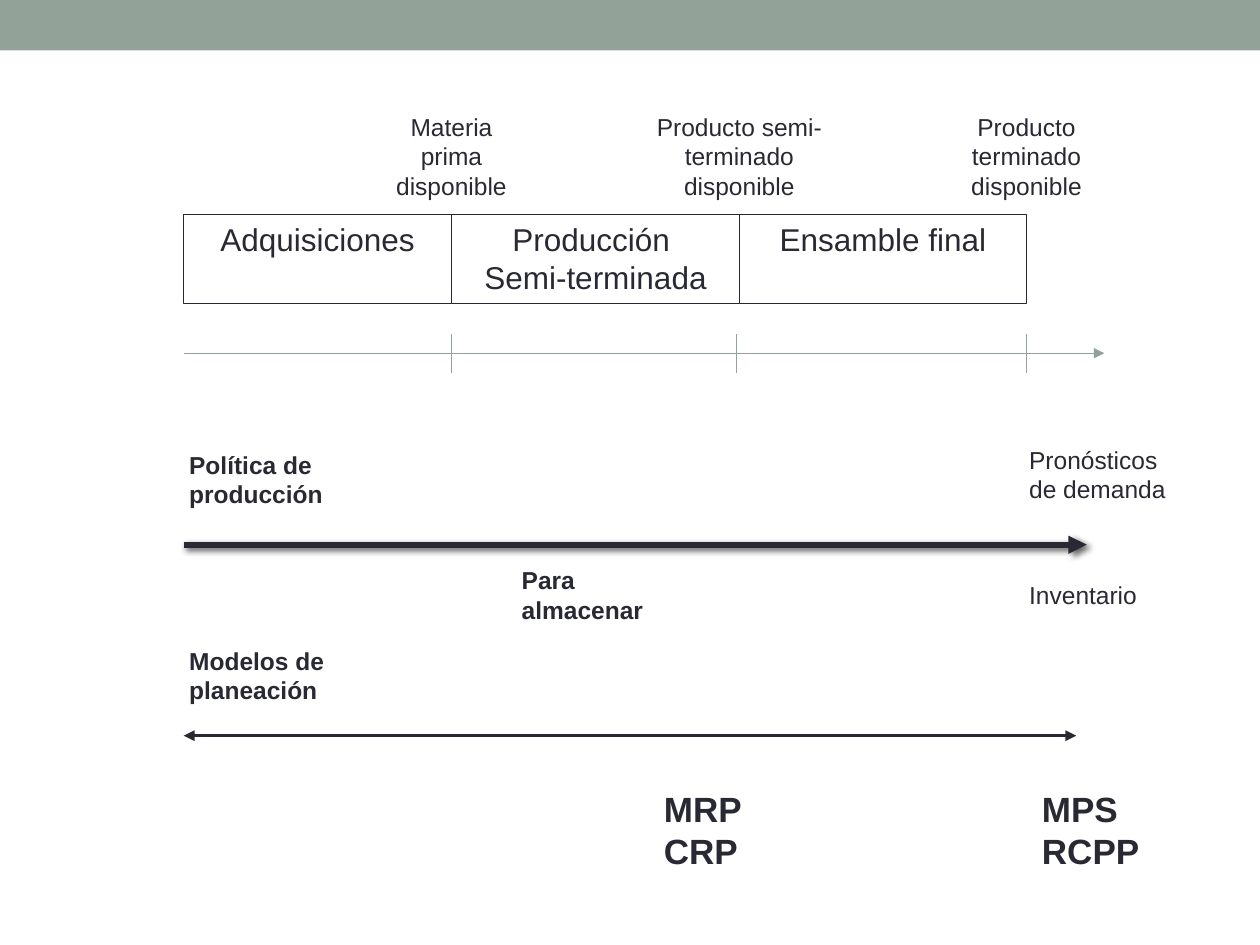
import pptx
import pptx.util
import pptx.dml.color
import pptx.enum.shapes
import pptx.enum.text
import pptx.oxml
import pptx.oxml.ns

Pt = pptx.util.Pt
INK, SAGE = "292934", "93A299"


def hue(code):
    return pptx.dml.color.RGBColor.from_string(code)


class Page:
    font = "Arial"

    def __init__(self, slide):
        self.slide = slide

    def put_text(self, shape, text, size, bold=False, center=False):
        frame = shape.text_frame
        frame.word_wrap = True
        frame.vertical_anchor = pptx.enum.text.MSO_ANCHOR.TOP
        frame.text = text
        align = pptx.enum.text.PP_ALIGN
        for para in frame.paragraphs:
            para.alignment = align.CENTER if center else align.LEFT
            for run in para.runs:
                run.font.name = self.font
                run.font.size = Pt(size)
                run.font.bold = bold
                run.font.color.rgb = hue(INK)

    def label(self, x, y, w, h, text, size=14, bold=False, center=False):
        box = self.slide.shapes.add_textbox(Pt(x), Pt(y), Pt(w), Pt(h))
        self.put_text(box, text, size, bold, center)

    def rect(self, x, y, w, h, fill=None, line=None):
        kind = pptx.enum.shapes.MSO_SHAPE.RECTANGLE
        box = self.slide.shapes.add_shape(kind, Pt(x), Pt(y), Pt(w), Pt(h))
        box.shadow.inherit = False
        if fill:
            box.fill.solid()
            box.fill.fore_color.rgb = hue(fill)
        else:
            box.fill.background()
        if line:
            box.line.color.rgb = hue(line)
            box.line.width = Pt(0.75)
        else:
            box.line.fill.background()
        return box

    def line(self, x1, y1, x2, y2, color, width=0.75, ends=(), shadow=False):
        kind = pptx.enum.shapes.MSO_CONNECTOR.STRAIGHT
        rule = self.slide.shapes.add_connector(kind, Pt(x1), Pt(y1), Pt(x2), Pt(y2))
        rule.line.color.rgb = hue(color)
        rule.line.width = Pt(width)
        props = rule._element.spPr
        stroke = props.find(pptx.oxml.ns.qn("a:ln"))
        space = pptx.oxml.ns.nsdecls("a")
        for end in ends:
            stroke.append(pptx.oxml.parse_xml(f'<a:{end} {space} type="triangle"/>'))
        cast = (
            f'<a:outerShdw blurRad="{Pt(3)}" dist="{Pt(2)}" dir="2700000" rotWithShape="0">'
            '<a:srgbClr val="000000"><a:alpha val="60000"/></a:srgbClr></a:outerShdw>'
        ) if shadow else ""
        props.append(pptx.oxml.parse_xml(f"<a:effectLst {space}>{cast}</a:effectLst>"))


def main():
    deck = pptx.Presentation()
    deck.slide_width, deck.slide_height = Pt(720), Pt(540)
    page = Page(deck.slides.add_slide(deck.slide_layouts[6]))
    left = 105

    # Top band
    page.rect(0, 0, 720, 28.8, fill=SAGE)

    # Stages of the process
    stages = [
        (left, 258, "Adquisiciones"),
        (258, 422.5, "Producción \nSemi-terminada"),
        (422.5, 586.6, "Ensamble final"),
    ]
    for start, stop, name in stages:
        box = page.rect(start, 122.4, stop - start, 51, line=INK)
        page.put_text(box, name, 18, center=True)

    # What is ready after each stage
    ready = [
        (258, 79, "Materia prima disponible"),
        (422.5, 118, "Producto semi-terminado disponible"),
        (586.6, 79, "Producto terminado disponible"),
    ]
    for mid, wide, text in ready:
        page.label(mid - wide / 2, 60.5, wide, 58, text, center=True)

    # Time axis with ticks
    for x in (258, 421, 586.6):
        page.line(x, 191, x, 213, SAGE)
    page.line(left, 201.8, 631, 201.8, SAGE, ends=["tailEnd"])

    # Production policy
    page.label(101, 253.4, 99.4, 41, "Política de producción", bold=True)
    page.line(left, 311.3, 621, 311.3, INK, 3.5, ["tailEnd"], shadow=True)
    page.label(291, 319.6, 99.4, 41, "Para almacenar", bold=True)
    page.label(581, 250.6, 99.4, 41, "Pronósticos de demanda")
    page.label(581, 327.8, 121.7, 24.5, "Inventario")

    # Planning models
    page.label(101, 365.6, 99.4, 41, "Modelos de planeación", bold=True)
    page.line(left, 420.4, 615, 420.4, INK, 2.08, ["headEnd", "tailEnd"])
    page.label(372.3, 446.4, 127.4, 55.4, "MRP\nCRP", 20, bold=True)
    page.label(588.3, 446.4, 99.4, 55.4, "MPS\nRCPP", 20, bold=True)

    deck.save("out.pptx")


if __name__ == "__main__":
    main()
